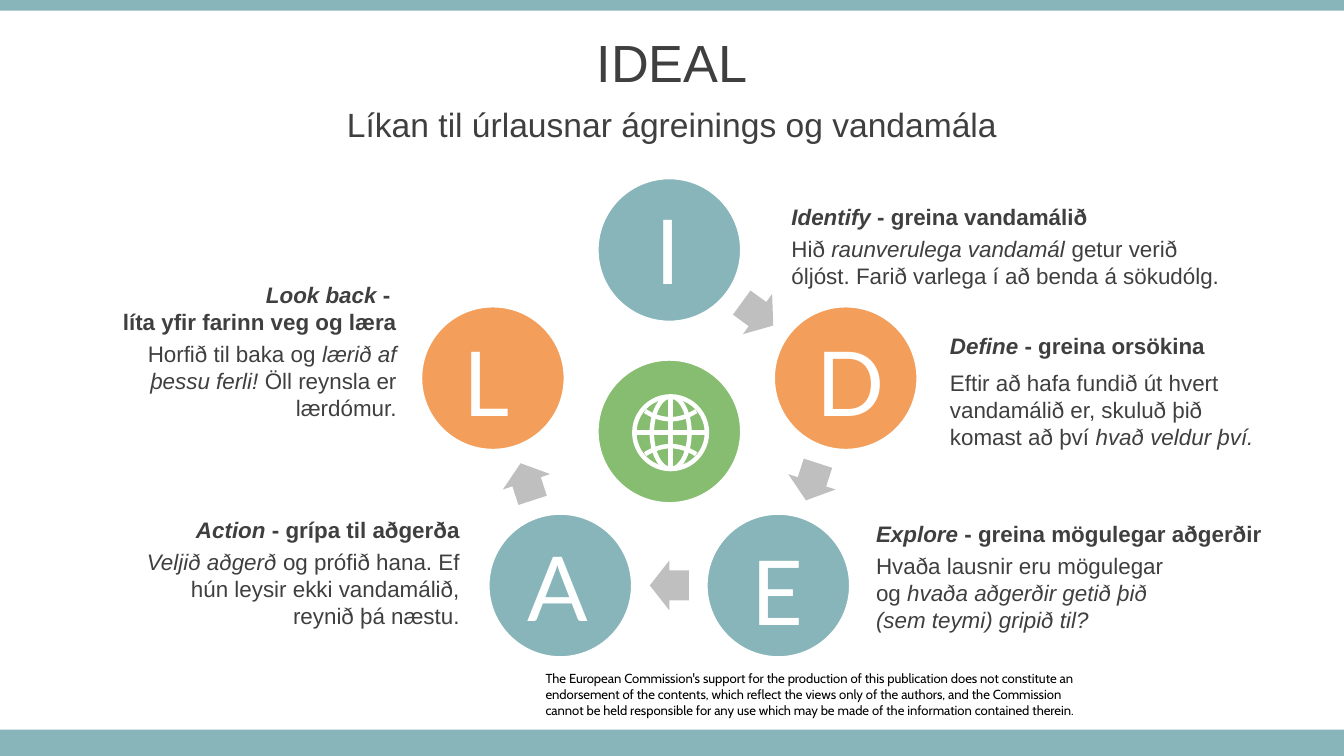
import math

import pptx
import pptx.dml.color
import pptx.enum.shapes
import pptx.enum.text
import pptx.oxml.ns
import pptx.util
from lxml import etree

Inches = pptx.util.Inches
Pt = pptx.util.Pt
SHAPE = pptx.enum.shapes.MSO_SHAPE
ALIGN = pptx.enum.text.PP_ALIGN
ANCHOR = pptx.enum.text.MSO_ANCHOR

COLORS = {
    "teal": "87B5BA", "orange": "F39E5A", "green": "86BD70", "gray": "BFBFBF",
    "text": "3F3F3F", "white": "FFFFFF", "black": "000000",
}
RGB = {name: pptx.dml.color.RGBColor.from_string(code) for name, code in COLORS.items()}

# Widescreen slide, 16:9
presentation = pptx.Presentation()
presentation.slide_width = Inches(10)
presentation.slide_height = Inches(10) * 9 // 16
slide = presentation.slides.add_slide(presentation.slide_layouts[6])
shapes = slide.shapes


def style_shape(shape, fill=None, line=None, width=2):
    shape.shadow.inherit = False
    if fill:
        shape.fill.solid()
        shape.fill.fore_color.rgb = RGB[fill]
    else:
        shape.fill.background()
    if line:
        shape.line.color.rgb = RGB[line]
        shape.line.width = Pt(width)
    else:
        shape.line.fill.background()


def add_text(box, paragraphs, size, font="Arial", color="text", bold=False,
             align=ALIGN.LEFT, anchor=ANCHOR.TOP, insets=(0.1, 0.05)):
    """Each paragraph is a list of (text, italic) runs."""
    frame = shapes.add_textbox(*map(Inches, box)).text_frame
    side, edge = map(Inches, insets)
    frame_format = {"word_wrap": True, "vertical_anchor": anchor, "margin_left": side,
                    "margin_right": side, "margin_top": edge, "margin_bottom": edge}
    for name, value in frame_format.items():
        setattr(frame, name, value)
    for index, runs in enumerate(paragraphs):
        paragraph = frame.paragraphs[0] if index == 0 else frame.add_paragraph()
        paragraph.alignment = align
        for text, italic in runs:
            run = paragraph.add_run()
            run.text = text
            run_format = {"name": font, "size": Pt(size), "bold": bold, "italic": italic}
            for name, value in run_format.items():
                setattr(run.font, name, value)
            run.font.color.rgb = RGB[color]


# Bands at the top and bottom
for top, height in ((0, 0.08), (5.43, 0.2)):
    band = shapes.add_shape(SHAPE.RECTANGLE, 0, Inches(top), Inches(10), Inches(height))
    style_shape(band, "teal")

# Disclaimer
add_text((4.06, 4.99, 4.17, 0.35), [
    [("The European Commission's support for the production of this publication does not "
      "constitute an endorsement of the contents, which reflect the views only of the "
      "authors, and the Commission", False)],
    [("cannot be held responsible for any use which may be made of the information "
      "contained therein.", False)],
], 7, font="Cabin", color="black", insets=(0, 0))

# Title and subtitle
for top, height, size, text in (
    (0.14, 0.63, 28, "IDEAL"),
    (0.77, 0.31, 18, "Líkan til úrlausnar ágreinings og vandamála"),
):
    add_text((0, top, 10, height), [[(text, False)]], size,
             align=ALIGN.CENTER, anchor=ANCHOR.MIDDLE)

# Ring of five circles, with arrows midway between neighbours
CENTER_X, CENTER_Y, RADIUS, DIAMETER = 4.98, 3.24, 1.38, 1.08
ARROW_RADIUS = RADIUS * math.cos(math.pi / 5)
ARROW_WIDTH, ARROW_HEIGHT = 0.29, 0.37
circle_centers = [(CENTER_X, 3.21, "green")]
for step, color in enumerate(("teal", "orange", "teal", "teal", "orange")):
    angle = math.radians(72 * step - 90)
    circle_centers.append((CENTER_X + RADIUS * math.cos(angle),
                           CENTER_Y + RADIUS * math.sin(angle), color))
for x, y, color in circle_centers:
    circle = shapes.add_shape(SHAPE.OVAL, Inches(x - DIAMETER / 2), Inches(y - DIAMETER / 2),
                              Inches(DIAMETER), Inches(DIAMETER))
    style_shape(circle, color, "white")
for step in range(4):
    angle = math.radians(72 * step - 54)
    x = CENTER_X + ARROW_RADIUS * math.cos(angle)
    y = CENTER_Y + ARROW_RADIUS * math.sin(angle)
    arrow = shapes.add_shape(SHAPE.LEFT_ARROW, Inches(x - ARROW_WIDTH / 2),
                             Inches(y - ARROW_HEIGHT / 2),
                             Inches(ARROW_WIDTH), Inches(ARROW_HEIGHT))
    arrow.adjustments[0] = 0.6
    arrow.adjustments[1] = 0.5
    arrow.rotation = (216 + 72 * step) % 360
    style_shape(arrow, "gray")

# Globe: outline and meridians, axis and equator, two parallels
GLOBE_X, GLOBE_Y, GLOBE_RADIUS, GLOBE_LINE = 4.99, 3.22, 0.27, 2.4
for half_width in (GLOBE_RADIUS, 0.14):
    oval = shapes.add_shape(SHAPE.OVAL, Inches(GLOBE_X - half_width),
                            Inches(GLOBE_Y - GLOBE_RADIUS),
                            Inches(2 * half_width), Inches(2 * GLOBE_RADIUS))
    style_shape(oval, None, "white", GLOBE_LINE)
for dx, dy in ((GLOBE_RADIUS, 0), (0, GLOBE_RADIUS)):
    line = shapes.add_connector(pptx.enum.shapes.MSO_CONNECTOR.STRAIGHT,
                                Inches(GLOBE_X - dx), Inches(GLOBE_Y - dy),
                                Inches(GLOBE_X + dx), Inches(GLOBE_Y + dy))
    line.line.color.rgb = RGB["white"]
    line.line.width = Pt(GLOBE_LINE)
    etree.SubElement(line._element.spPr, pptx.oxml.ns.qn("a:effectLst"))
for side in (-1, 1):
    points = [(Inches(GLOBE_X + 0.19 * t / 8),
               Inches(GLOBE_Y + side * (0.1 + 0.06 * (t / 8) ** 2))) for t in range(-8, 9)]
    builder = shapes.build_freeform(*points[0])
    builder.add_line_segments(points[1:], close=False)
    style_shape(builder.convert_to_shape(), None, "white", GLOBE_LINE)

# Letters on the circles
for letter, left, top in (("I", 4.78, 1.4), ("D", 5.98, 2.38), ("E", 5.49, 3.94),
                          ("A", 3.83, 3.91), ("L", 3.35, 2.38)):
    add_text((left, top, 0.68, 0.91), [[(letter, False)]], 48, font="Lato", color="white")

# Heading and description of each step
steps = [
    (ALIGN.LEFT, (5.79, 1.46, 3.12, 0.3),
     [[("Identify", True), (" - greina vandamálið", False)]],
     (5.79, 1.7, 3.45, 0.5),
     [("Hið ", False), ("raunverulega vandamál ", True),
      ("getur verið óljóst. Farið varlega í að benda á sökudólg.", False)]),
    (ALIGN.LEFT, (6.97, 2.42, 2.54, 0.3),
     [[("Define ", True), ("- greina orsökina", False)]],
     (6.97, 2.7, 2.54, 0.71),
     [("Eftir að hafa fundið út hvert vandamálið er, skuluð þið komast að því ", False),
      ("hvað veldur því.", True)]),
    (ALIGN.LEFT, (6.42, 3.82, 3.23, 0.3),
     [[("Explore ", True), ("- greina mögulegar aðgerðir", False)]],
     (6.42, 4.06, 2.54, 0.71),
     [("Hvaða lausnir eru mögulegar og ", False),
      ("hvaða aðgerðir getið þið (sem teymi) gripið til?", True)]),
    (ALIGN.RIGHT, (0.98, 3.79, 2.54, 0.3),
     [[("Action ", True), ("- grípa til aðgerða", False)]],
     (0.98, 4.03, 2.54, 0.71),
     [("Veljið aðgerð ", True),
      ("og prófið hana. Ef hún leysir ekki vandamálið, reynið þá næstu.", False)]),
    (ALIGN.RIGHT, (0.25, 2.04, 2.8, 0.5),
     [[("Look back ", True), ("- ", False)], [("líta yfir farinn veg og læra", False)]],
     (0.53, 2.48, 2.52, 0.71),
     [("Horfið til baka og ", False), ("lærið af þessu ferli!", True),
      (" Öll reynsla er lærdómur.", False)]),
]
for align, heading_box, heading, body_box, body in steps:
    add_text(heading_box, heading, 12, bold=True, align=align)
    add_text(body_box, [body], 12, align=align)

presentation.save("out.pptx")
